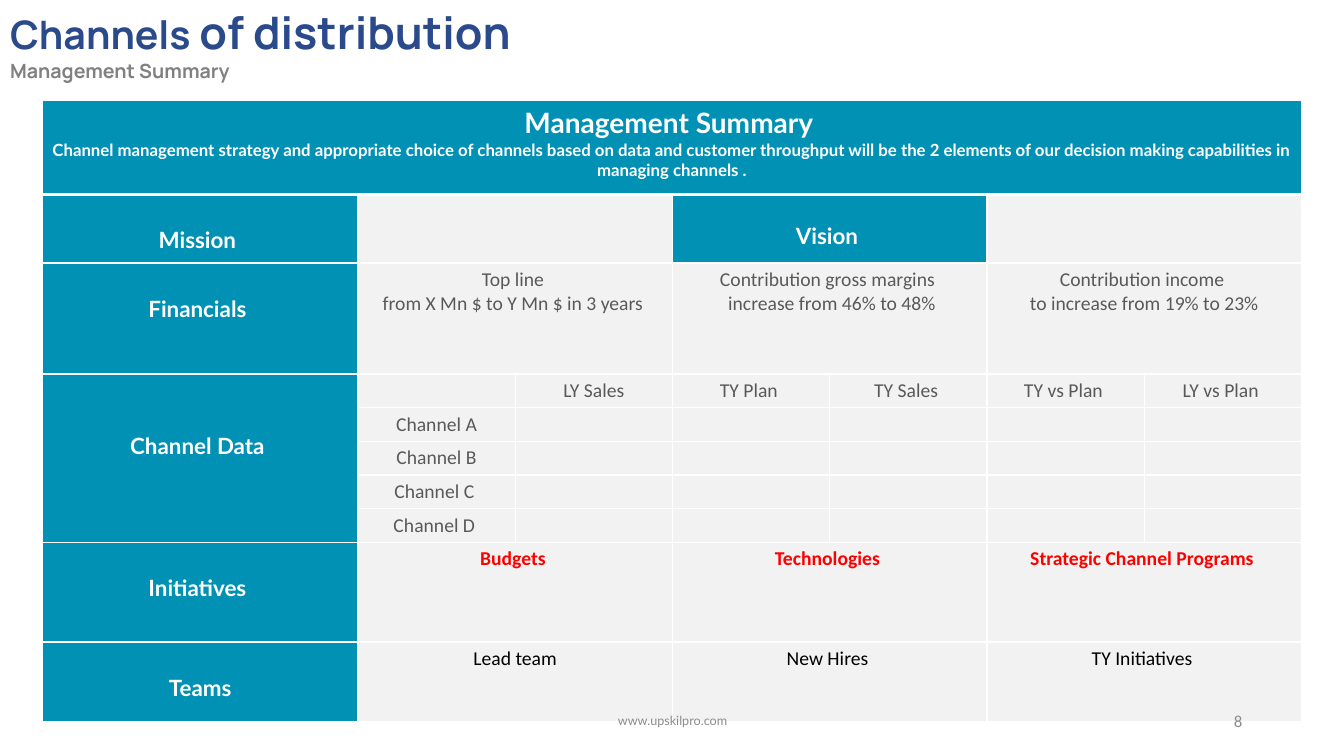
from dataclasses import dataclass

from lxml import etree
from pptx import Presentation
from pptx.dml.color import RGBColor
from pptx.enum import text as txt
from pptx.oxml import ns
from pptx.util import Inches, Pt


@dataclass(frozen=True)
class Style:
    size: float
    font: str
    color: str
    bold: bool = False


@dataclass(frozen=True)
class Theme:
    teal: str = "0091B5"
    pale: str = "F2F2F2"
    rule: str = "FFFFFF"
    title: Style = Style(28, "Manrope", "2A4A8B", True)
    title_large: Style = Style(32, "Manrope", "2A4A8B", True)
    subtitle: Style = Style(14, "Manrope", "808080", True)
    banner: Style = Style(20, "Lato", "FFFFFF", True)
    strategy: Style = Style(12, "Lato", "FFFFFF", True)
    heading: Style = Style(16, "Lato", "FFFFFF", True)
    body: Style = Style(14, "Calibri", "595959")
    initiative: Style = Style(14, "Calibri", "FF0000", True)
    team: Style = Style(14, "Calibri", "000000")
    number: Style = Style(12, "Calibri", "8C8C8C")
    website: Style = Style(9, "Lato", "8C8C8C")


THEME = Theme()
CENTER = txt.PP_ALIGN.CENTER


@dataclass(frozen=True)
class Entry:
    """Text of one table cell; top is its upper margin in inches."""
    row: int
    col: int
    lines: tuple[str, ...]
    styles: tuple[Style, ...]
    fill: str = THEME.pale
    top: float = 0.05


@dataclass(frozen=True)
class Footer:
    left: float
    width: float
    words: str
    style: Style
    align: txt.PP_ALIGN


COLUMNS = [3.13] + [1.56] * 6
ROWS = [0.93, 0.68, 1.1] + [0.33] * 5 + [0.99, 0.79]
PAIRED_ROWS = (1, 2, 8, 9)
PAIR_STARTS = (1, 3, 5)
CHANNEL_ROW = 3


def heading(row: int, words: str, col: int = 0, top: float = 0.32) -> Entry:
    return Entry(row, col, (words,), (THEME.heading,), THEME.teal, top)


def across(row: int, style: Style, *cells: str) -> list[Entry]:
    """One entry for each pair of columns; a line break starts a paragraph."""
    return [Entry(row, col, tuple(words.split("\n")), (style,))
            for col, words in zip(PAIR_STARTS, cells)]


ENTRIES = [
    Entry(0, 0, (
        "Management Summary ",
        "Channel management strategy and appropriate choice of channels based on data "
        "and customer throughput will be the 2 elements of our decision making "
        "capabilities in managing channels .",
    ), (THEME.banner, THEME.strategy), THEME.teal),
    heading(1, "Mission "),
    heading(1, "Vision ", col=3, top=0.28),
    heading(2, "Financials "),
    heading(CHANNEL_ROW, "Channel Data ", top=0.58),
    heading(8, "Initiatives "),
    heading(9, "Teams"),
    *across(2, THEME.body,
            "Top line \nfrom X Mn $ to Y Mn $ in 3 years ",
            "Contribution gross margins \n increase from 46% to 48%",
            "Contribution income \nto increase from 19% to 23%"),
    *[Entry(CHANNEL_ROW, col, (words,), (THEME.body,)) for col, words in enumerate(
        ("LY Sales", "TY Plan ", "TY Sales ", "TY vs Plan ", "LY vs Plan "), start=2)],
    *[Entry(row, 1, (words,), (THEME.body,)) for row, words in enumerate(
        ("Channel A", "Channel B", "Channel C ", "Channel D "), start=CHANNEL_ROW + 1)],
    *across(8, THEME.initiative, "Budgets ", "Technologies ", "Strategic Channel Programs "),
    *across(9, THEME.team, "Lead team", "New Hires ", "TY Initiatives "),
]

FOOTERS = [
    Footer(9.42, 3, "8", THEME.number, txt.PP_ALIGN.RIGHT),
    Footer(4.42, 4.5, "www.upskilpro.com", THEME.website, CENTER),
]


def write(paragraph, words: str, *, style: Style, align=CENTER) -> None:
    paragraph.alignment = align
    run = paragraph.add_run()
    run.text = words
    run.font.size = Pt(style.size)
    run.font.name = style.font
    run.font.bold = style.bold
    run.font.color.rgb = RGBColor.from_string(style.color)


def add_borders(cell, top: float, bottom: float) -> None:
    properties = cell._tc.get_or_add_tcPr()
    for side, points in (("L", 1), ("R", 1), ("T", top), ("B", bottom)):
        line = etree.SubElement(properties, ns.qn(f"a:ln{side}"), w=str(Pt(points)))
        solid = etree.SubElement(line, ns.qn("a:solidFill"))
        etree.SubElement(solid, ns.qn("a:srgbClr"), val=THEME.rule)


def paint(cell, color: str) -> None:
    cell.fill.solid()
    cell.fill.fore_color.rgb = RGBColor.from_string(color)


def add_summary_table(slide) -> None:
    table = slide.shapes.add_table(
        len(ROWS), len(COLUMNS), Inches(0.42), Inches(1),
        Inches(sum(COLUMNS)), Inches(sum(ROWS))).table
    table.first_row = table.horz_banding = False
    for column, width in zip(table.columns, COLUMNS):
        column.width = Inches(width)
    for row, height in zip(table.rows, ROWS):
        row.height = Inches(height)

    filled = {(entry.row, entry.col) for entry in ENTRIES}
    for row in range(len(ROWS)):
        for col in range(len(COLUMNS)):
            cell = table.cell(row, col)
            add_borders(cell, top=3 if row == 1 else 1, bottom=3 if row == 0 else 1)
            paint(cell, THEME.pale)
            if (row, col) not in filled:
                # Keeps an empty cell from stretching its row
                etree.SubElement(cell.text_frame.paragraphs[0]._p,
                                 ns.qn("a:endParaRPr"), sz=str(THEME.body.size * 100))

    table.cell(0, 0).merge(table.cell(0, len(COLUMNS) - 1))
    table.cell(CHANNEL_ROW, 0).merge(table.cell(CHANNEL_ROW + 4, 0))
    for row in PAIRED_ROWS:
        for col in PAIR_STARTS:
            table.cell(row, col).merge(table.cell(row, col + 1))

    for entry in ENTRIES:
        cell = table.cell(entry.row, entry.col)
        paint(cell, entry.fill)
        cell.margin_top = Inches(entry.top)
        frame = cell.text_frame
        for index, words in enumerate(entry.lines):
            paragraph = frame.add_paragraph() if index else frame.paragraphs[0]
            write(paragraph, words, style=entry.styles[min(index, len(entry.styles) - 1)])


def add_title(slide) -> None:
    title = slide.shapes.title
    title.left, title.top = Inches(0), Inches(0)
    title.width, title.height = Inches(7.71), Inches(0.88)
    frame = title.text_frame
    frame.word_wrap = True
    frame.auto_size = txt.MSO_AUTO_SIZE.SHAPE_TO_FIT_TEXT
    frame.vertical_anchor = txt.MSO_ANCHOR.TOP
    left = txt.PP_ALIGN.LEFT
    write(frame.paragraphs[0], "Channels", style=THEME.title, align=left)
    write(frame.paragraphs[0], " of distribution", style=THEME.title_large, align=left)
    write(frame.add_paragraph(), "Management Summary", style=THEME.subtitle, align=left)


def add_footer(slide, footer: Footer) -> None:
    frame = slide.shapes.add_textbox(
        Inches(footer.left), Inches(6.95), Inches(footer.width), Inches(0.4)).text_frame
    frame.word_wrap = True
    frame.vertical_anchor = txt.MSO_ANCHOR.MIDDLE
    write(frame.paragraphs[0], footer.words, style=footer.style, align=footer.align)


def main() -> None:
    deck = Presentation()
    deck.slide_width, deck.slide_height = Inches(13.33), Inches(7.5)
    slide = deck.slides.add_slide(deck.slide_layouts.get_by_name("Title Only"))
    add_summary_table(slide)
    add_title(slide)
    for footer in FOOTERS:
        add_footer(slide, footer)
    deck.save("out.pptx")


if __name__ == "__main__":
    main()
